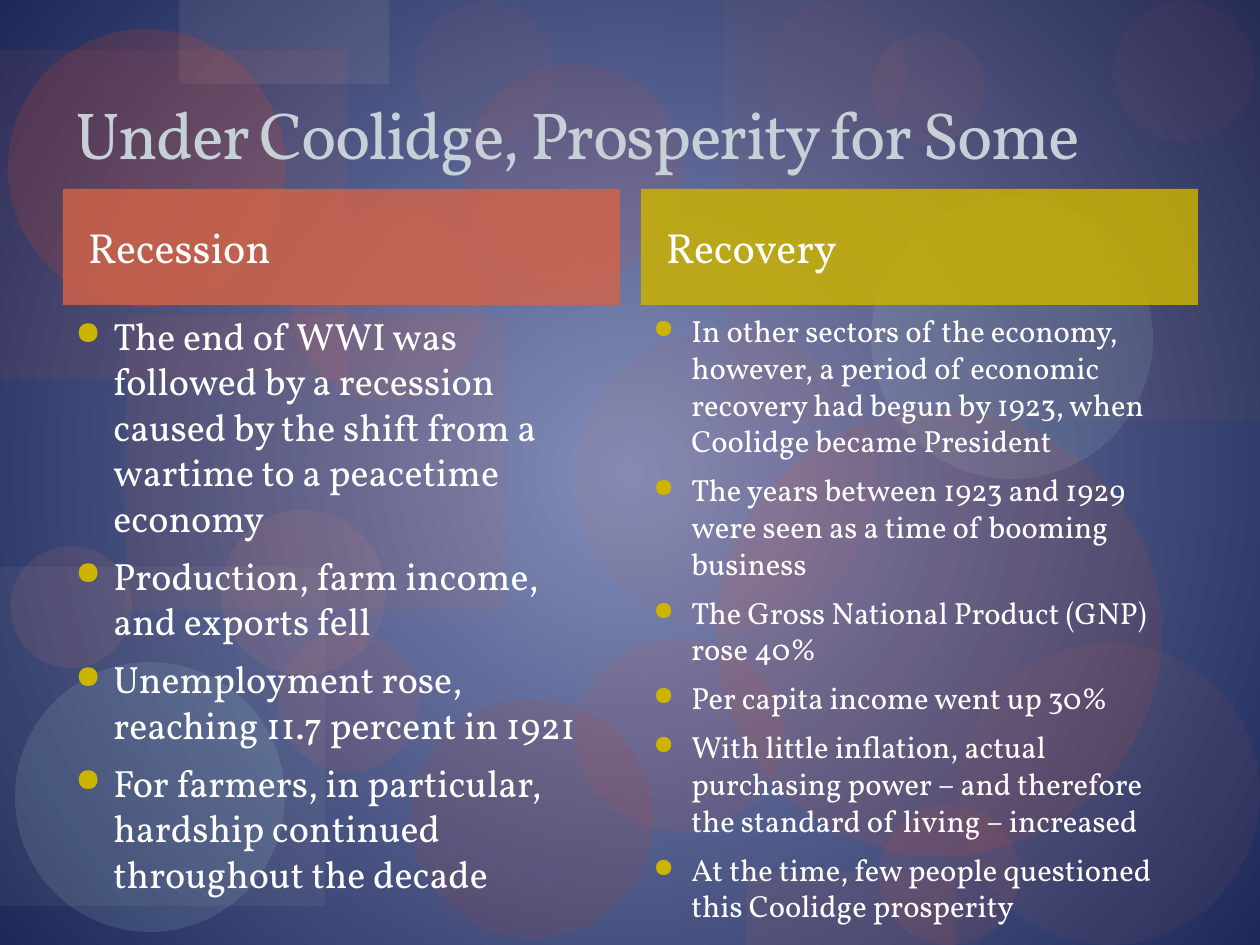
import lxml.etree
import pptx
import pptx.dml.color
import pptx.enum.shapes
import pptx.enum.text
import pptx.oxml.ns
import pptx.util

SCALE = 914400 / 126  # EMU in one px
COLORS = {
    "core": "838DBA", "edge": "1D2958", "rust": "D16349", "brick": "BB412B",
    "gray": "B8BAC3", "clay": "BF6154", "tomato": "FF6347", "mint": "C1E8E4",
    "red": "FF471B", "pink": "E5B7B1", "coral": "FF8674", "gold": "CCB400",
    "white": "FFFFFF", "title": "C5D1D7",
}
KINDS = {
    "rect": pptx.enum.shapes.MSO_SHAPE.RECTANGLE,
    "oval": pptx.enum.shapes.MSO_SHAPE.OVAL,
}


def px(num):
    return round(num * SCALE)


def rgb(name):
    return pptx.dml.color.RGBColor.from_string(COLORS[name])


def add(parent, tag, **attrs):
    return lxml.etree.SubElement(parent, pptx.oxml.ns.qn(tag), **attrs)


class Deck:
    font = "Vollkorn"

    def __init__(self, wide, high):
        self.prs = pptx.Presentation()
        self.prs.slide_width, self.prs.slide_height = px(wide), px(high)
        self.slide = self.prs.slides.add_slide(self.prs.slide_layouts[6])

    def glow(self, inner, outer):
        """Fill the background with a round gradient."""
        fill = self.slide.background.fill
        fill.gradient()
        for stop, name, pos in zip(fill.gradient_stops, (inner, outer), (0, 1)):
            stop.color.rgb, stop.position = rgb(name), pos
        line = self.slide.element.find(".//" + pptx.oxml.ns.qn("a:lin"))
        grad = line.getparent()
        grad.remove(line)
        way = add(grad, "a:path", path="circle")
        add(way, "a:fillToRect", l="50000", t="50000", r="50000", b="50000")

    def shape(self, kind, box, color, alpha):
        """Draw a see-through shape; alpha is in percent."""
        item = self.slide.shapes.add_shape(KINDS[kind], *map(px, box))
        item.shadow.inherit = False
        item.line.fill.background()
        item.fill.solid()
        item.fill.fore_color.rgb = rgb(color)
        tint = item.fill._xPr.find(".//" + pptx.oxml.ns.qn("a:srgbClr"))
        add(tint, "a:alpha", val=str(alpha * 1000))
        return item

    def style(self, para, size, color):
        para.alignment = pptx.enum.text.PP_ALIGN.LEFT
        para.font.name = self.font
        para.font.size = pptx.util.Pt(size)
        para.font.color.rgb = rgb(color)

    def frame(self, box):
        text = self.slide.shapes.add_textbox(*map(px, box)).text_frame
        text.word_wrap = True
        return text

    def title(self, box, words):
        text = self.frame(box)
        text.vertical_anchor = pptx.enum.text.MSO_ANCHOR.BOTTOM
        para = text.paragraphs[0]
        para.text = words
        self.style(para, 38, "title")
        para.runs[0].font._element.set("spc", "-100")

    def header(self, box, words, color):
        text = self.shape("rect", box, color, 83).text_frame
        text.vertical_anchor = pptx.enum.text.MSO_ANCHOR.MIDDLE
        text.margin_left = pptx.util.Inches(0.2)
        text.margin_top = text.margin_bottom = pptx.util.Inches(0.1)
        para = text.paragraphs[0]
        para.text = words
        self.style(para, 24, "white")

    def bullets(self, box, lines, size):
        text = self.frame(box)
        for i, line in enumerate(lines):
            para = text.add_paragraph() if i else text.paragraphs[0]
            para.text = line
            props = para._p.get_or_add_pPr()
            props.set("marL", str(px(38)))
            props.set("indent", str(px(-38)))
            tint = add(props, "a:buClr")
            add(tint, "a:srgbClr", val=COLORS["gold"])
            add(props, "a:buSzPct", val="85000")
            add(props, "a:buChar", char="●")
            para.space_before = pptx.util.Pt(7)
            self.style(para, size, "white")


# Backdrop shapes, back to front: kind, box, color, alpha
BACKDROP = [
    ("rect", (126, 316, 378, 294), "rust", 9),
    ("oval", (411, 699, 242, 239), "brick", 13),
    ("rect", (724, 0, 536, 420), "rust", 6),
    ("rect", (0, 567, 325, 339), "gray", 8),
    ("oval", (576, 329, 300, 300), "clay", 8),
    ("oval", (879, 805, 140, 140), "tomato", 9),
    ("oval", (871, 197, 282, 282), "mint", 11),
    ("oval", (15, 662, 270, 270), "mint", 12),
    ("oval", (278, 631, 141, 141), "tomato", 9),
    ("oval", (575, 638, 209, 193), "red", 8),
    ("rect", (0, 50, 347, 329), "tomato", 7),
    ("rect", (179, 0, 210, 84), "pink", 10),
    ("oval", (8, 29, 278, 278), "red", 15),
    ("oval", (10, 546, 122, 122), "coral", 10),
    ("oval", (292, 208, 193, 193), "tomato", 9),
    ("oval", (464, 64, 219, 219), "red", 8),
    ("oval", (716, 410, 446, 446), "red", 10),
    ("oval", (766, 1, 141, 141), "tomato", 4),
    ("oval", (958, 643, 302, 302), "clay", 8),
    ("oval", (221, 510, 165, 165), "coral", 10),
    ("oval", (872, 32, 113, 113), "tomato", 6),
    ("oval", (1113, 1, 141, 141), "tomato", 4),
    ("rect", (746, 872, 210, 73), "rust", 10),
    ("oval", (415, 1, 141, 141), "tomato", 4),
]

# Columns: left edge, heading, color, text size, points
COLUMNS = [
    (63, "Recession", "rust", 21.7, [
        "The end of WWI was followed by a recession caused by the shift "
        "from a wartime to a peacetime economy",
        "Production, farm income, and exports fell",
        "Unemployment rose, reaching 11.7 percent in 1921",
        "For farmers, in particular, hardship continued throughout the decade",
    ]),
    (641, "Recovery", "gold", 17.5, [
        "In other sectors of the economy, however, a period of economic "
        "recovery had begun by 1923, when Coolidge became President",
        "The years between 1923 and 1929 were seen as a time of booming business",
        "The Gross National Product (GNP) rose 40%",
        "Per capita income went up 30%",
        "With little inflation, actual purchasing power – and therefore "
        "the standard of living – increased",
        "At the time, few people questioned this Coolidge prosperity",
    ]),
]


def main():
    deck = Deck(1260, 945)

    # Background
    deck.glow("core", "edge")
    for args in BACKDROP:
        deck.shape(*args)

    # Title and columns
    deck.title((63, 21, 1134, 158), "Under Coolidge, Prosperity for Some")
    for left, head, color, size, lines in COLUMNS:
        deck.header((left, 189, 557, 116), head, color)
        deck.bullets((left, 306, 557, 539), lines, size)

    deck.prs.save("out.pptx")


if __name__ == "__main__":
    main()
